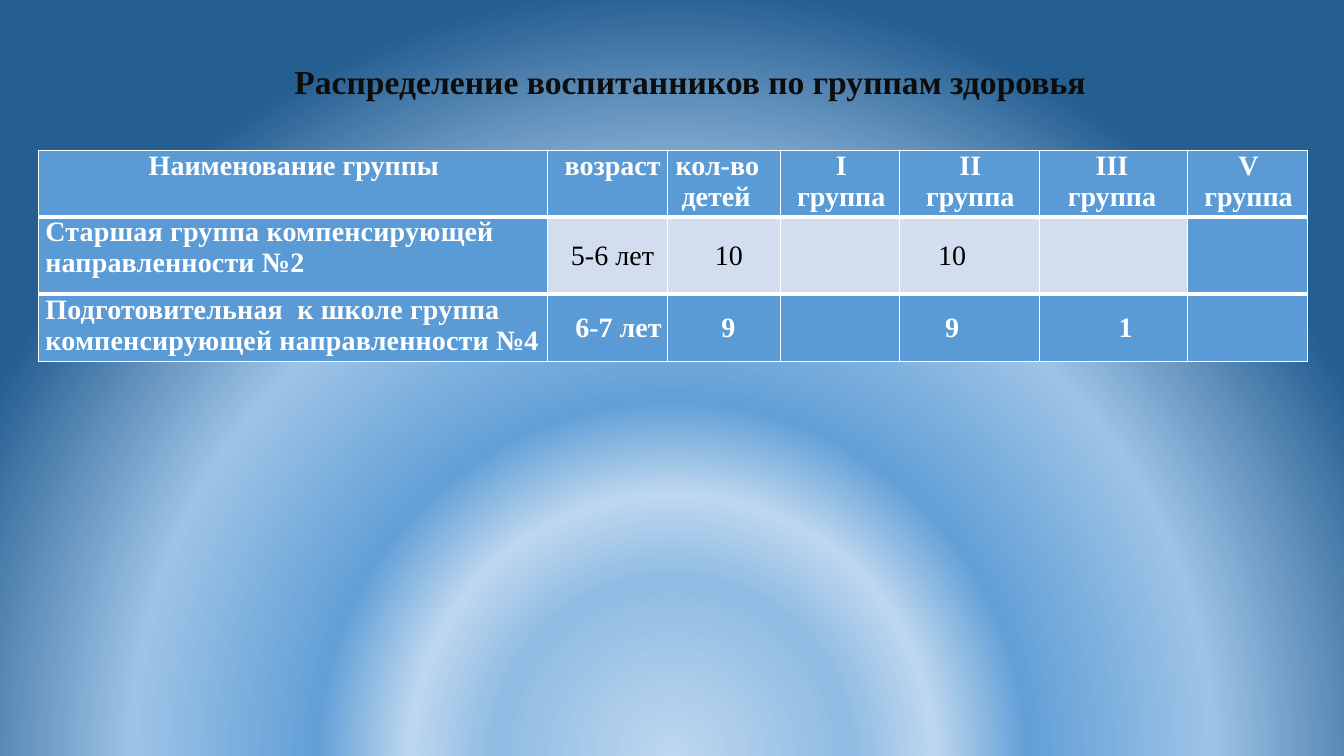
from dataclasses import dataclass

from lxml.etree import SubElement
from pptx import Presentation
from pptx.dml.color import RGBColor
from pptx.enum.text import MSO_ANCHOR as Anchor, MSO_AUTO_SIZE as AutoSize, PP_ALIGN as Align
from pptx.oxml.ns import qn
from pptx.util import Inches, Pt

FONT = "Times New Roman"
COLORS = {"blue": "5B9BD5", "pale": "D2DEEF", "white": "FFFFFF",
          "black": "000000", "title": "0D0D0D"}
GRADIENT = {0: "BDD7EE", 23: "90BCE3", 34: "BDD7EE", 46: "63A0D7",
            70: "9DC3E6", 100: "255E91"}
FOCUS = {"l": 50, "t": 130, "r": 50, "b": -30}
COLUMN_WIDTHS = [5.05, 1.19, 1.12, 1.18, 1.39, 1.47, 1.19]
ROW_HEIGHTS = [0.66, 0.77, 0.67]


@dataclass
class Entry:
    """Cell content; a positive shift is a left margin, a negative one a right margin."""
    text: str = ""
    shift: float = 0
    indent: float = 0
    centered: bool = True
    pale: bool = False
    middle: bool = True
    spacing: int = 0


def heading(text: str, shift: float = 0, indent: float = 0, centered: bool = True) -> Entry:
    return Entry(text, shift, indent, centered, middle=False)


def group_name(text: str) -> Entry:
    return Entry(text, 0.07, centered=False, middle=False, spacing=10)


def pale(text: str = "", shift: float = 0) -> Entry:
    return Entry(text, shift, pale=True)


ROWS = [
    [heading("Наименование группы", 0.02), heading("возраст", 0.17, centered=False),
     heading("кол-во детей", 0.14, -0.06, centered=False), heading("I\nгруппа", 0.03),
     heading("II\nгруппа", 0.02), heading("III\nгруппа", -0.03), heading("V\nгруппа", 0.02)],
    [group_name("Старшая группа компенсирующей направленности №2"),
     pale("5-6 лет", 0.1), pale("10", 0.1), pale(), pale("10", -0.34), pale(), Entry()],
    [group_name("Подготовительная  к школе группа компенсирующей направленности №4"),
     Entry("6-7 лет", 0.22), Entry("9", 0.09), Entry(), Entry("9", -0.34),
     Entry("1", 0.24), Entry()],
]


def add_color(parent, color: str) -> None:
    SubElement(parent, qn("a:srgbClr"), val=color)


def paint_background(slide) -> None:
    slide.background.fill.solid()
    properties = slide.element.find(".//" + qn("p:bgPr"))
    properties.remove(properties[0])
    gradient = SubElement(properties, qn("a:gradFill"), rotWithShape="1")
    properties.insert(0, gradient)
    stops = SubElement(gradient, qn("a:gsLst"))
    for position, color in GRADIENT.items():
        add_color(SubElement(stops, qn("a:gs"), pos=str(position * 1000)), color)
    circle = SubElement(gradient, qn("a:path"), attrib={"path": "circle"})
    SubElement(circle, qn("a:fillToRect"),
               attrib={side: str(value * 1000) for side, value in FOCUS.items()})


def format_paragraph(paragraph, size: float, color: str, bold: bool = True,
                     margin: float = 0, indent: float = 0) -> None:
    properties = paragraph._p.get_or_add_pPr()
    properties.set("marL", str(Inches(max(margin, 0))))
    properties.set("marR", str(Inches(max(-margin, 0))))
    properties.set("indent", str(Inches(indent)))
    for run in paragraph.runs:
        run.font.name = FONT
        run.font.size = Pt(size)
        run.font.bold = bold
        run.font.color.rgb = RGBColor.from_string(COLORS[color])


def draw_borders(cell, row: int) -> None:
    last = len(ROW_HEIGHTS) - 1
    widths = {"L": 1, "R": 1, "T": 3 if row > 0 else 1, "B": 3 if row < last else 1}
    properties = cell._tc.get_or_add_tcPr()
    for index, (side, width) in enumerate(widths.items()):
        line = SubElement(properties, qn("a:ln" + side), w=str(Pt(width)))
        properties.insert(index, line)
        add_color(SubElement(line, qn("a:solidFill")), COLORS["white"])


def fill_cell(cell, entry: Entry, row: int) -> None:
    cell.margin_left = cell.margin_right = cell.margin_top = cell.margin_bottom = 0
    cell.vertical_anchor = Anchor.MIDDLE if entry.middle else Anchor.TOP
    cell.fill.solid()
    cell.fill.fore_color.rgb = RGBColor.from_string(COLORS["pale" if entry.pale else "blue"])
    draw_borders(cell, row)
    cell.text_frame.text = entry.text
    for paragraph in cell.text_frame.paragraphs:
        paragraph.alignment = Align.CENTER if entry.centered else Align.LEFT
        format_paragraph(paragraph, 20, "black" if entry.pale else "white",
                         not entry.pale, entry.shift, entry.indent)
        for run in paragraph.runs:
            run._r.get_or_add_rPr().set("spc", str(entry.spacing))


def add_health_table(slide) -> None:
    table = slide.shapes.add_table(
        len(ROW_HEIGHTS), len(COLUMN_WIDTHS), Inches(0.38), Inches(1.49),
        Inches(sum(COLUMN_WIDTHS)), Inches(sum(ROW_HEIGHTS))).table
    for column, width in zip(table.columns, COLUMN_WIDTHS):
        column.width = Inches(width)
    for row, height in zip(table.rows, ROW_HEIGHTS):
        row.height = Inches(height)
    for row_index, entries in enumerate(ROWS):
        for column_index, entry in enumerate(entries):
            fill_cell(table.cell(row_index, column_index), entry, row_index)


def set_title(slide) -> None:
    title = slide.shapes.title
    title.left, title.top = Inches(2.33), Inches(0.55)
    title.width, title.height = Inches(8.63), Inches(0.5)
    frame = title.text_frame
    frame.text = "Распределение воспитанников по группам здоровья"
    frame.word_wrap = True
    frame.auto_size = AutoSize.NONE
    frame.vertical_anchor = Anchor.TOP
    frame.margin_right = 0
    paragraph = frame.paragraphs[0]
    paragraph.alignment = Align.LEFT
    format_paragraph(paragraph, 24, "title", indent=0.49)


def main() -> None:
    presentation = Presentation()
    presentation.slide_width = Inches(13.33)
    presentation.slide_height = Inches(7.5)
    slide = presentation.slides.add_slide(presentation.slide_layouts[5])  # title only
    paint_background(slide)
    add_health_table(slide)
    set_title(slide)
    presentation.save("out.pptx")


if __name__ == "__main__":
    main()
